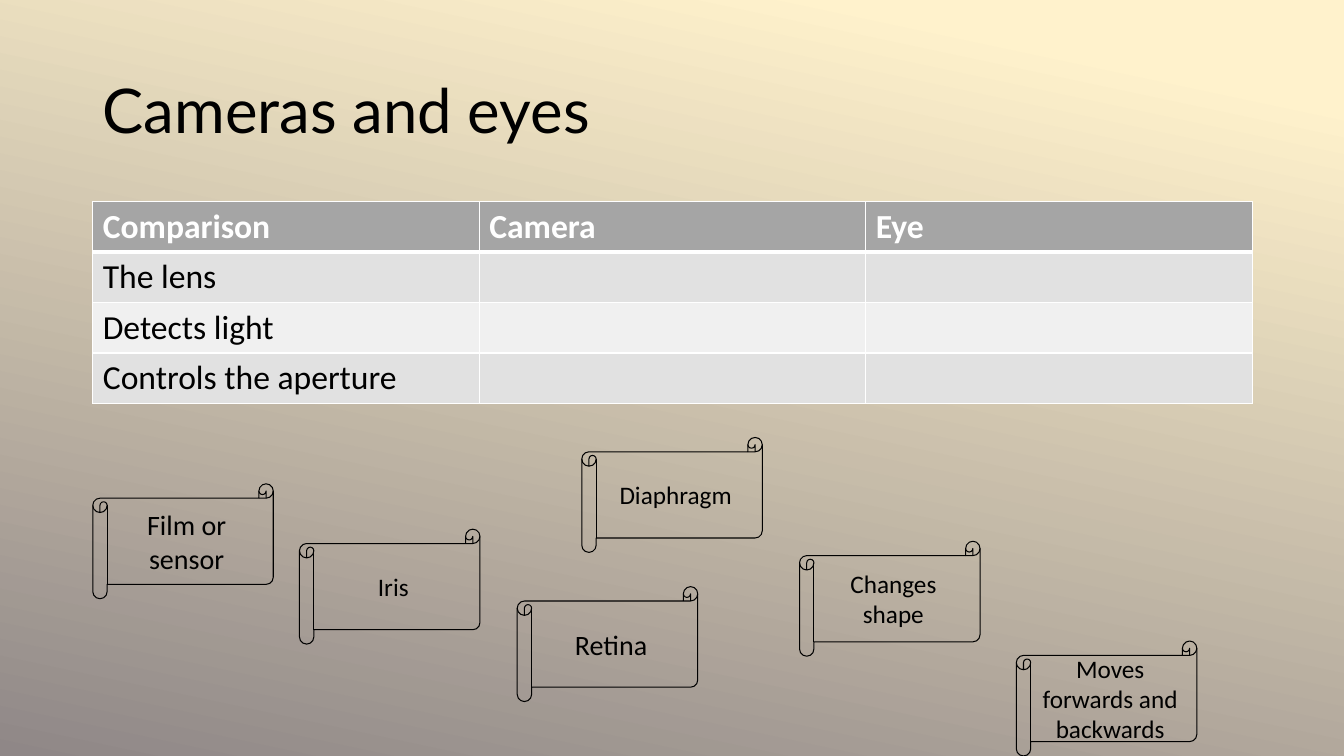
from pptx import Presentation, util as u
from pptx.dml.color import RGBColor
from pptx.enum import shapes, text
from pptx.oxml import parse_xml
from pptx.oxml.ns import nsdecls

TITLE = "Cameras and eyes"
ROWS = [
    ("Comparison", "Camera", "Eye"),
    ("The lens", "", ""),
    ("Detects light", "", ""),
    ("Controls the aperture", "", ""),
]
# label, left, top, type size
SCROLLS = [
    ("Film or sensor", 0.92, 4.8, 20),
    ("Iris", 2.97, 5.25, 18),
    ("Retina", 5.13, 5.82, 20),
    ("Diaphragm", 5.77, 4.34, 18),
    ("Changes shape", 7.93, 5.37, 18),
    ("Moves forwards and backwards", 10.08, 6.36, 18),
]
THEME = {
    "title_font": "Lato", "body_font": "Calibri",
    "title_size": 44, "table_size": 24,
    "ink": "000000", "white": "FFFFFF", "header": "A5A5A5",
    "bands": ("E1E1E1", "F0F0F0"),
    "backdrop": ((0.1, "FFF2CC"), (1, "8F8787")), "angle": 102,
}
LEFT, CONTENT_WIDTH = 0.92, 11.5
TITLE_TOP, TITLE_HEIGHT = 0.4, 1.45
TABLE_TOP, ROW_HEIGHT = 2, 0.5
SCROLL_WIDTH, SCROLL_HEIGHT = 1.79, 1.14


def rgb(name):
    return RGBColor.from_string(THEME.get(name, name))


def write(frame, words, size, font="body_font", color="ink", bold=False, **para_format):
    para = frame.paragraphs[0]
    for key, value in para_format.items():
        setattr(para, key, value)
    span = para.add_run()
    span.text = words
    style = {"name": THEME[font], "size": u.Pt(size), "bold": bold}
    for key, value in style.items():
        setattr(span.font, key, value)
    span.font.color.rgb = rgb(color)


def paint_background(page):
    fill = page.background.fill
    fill.gradient()
    fill.gradient_angle = 360 - THEME["angle"]
    for stop, (position, color) in zip(fill.gradient_stops, THEME["backdrop"]):
        stop.position = position
        stop.color.rgb = rgb(color)


def add_title(page):
    box = page.shapes.add_textbox(*map(u.Inches, (LEFT, TITLE_TOP, CONTENT_WIDTH, TITLE_HEIGHT)))
    box.text_frame.word_wrap = True
    box.text_frame.vertical_anchor = text.MSO_ANCHOR.MIDDLE
    write(box.text_frame, TITLE, THEME["title_size"], "title_font", line_spacing=0.9)


def add_borders(cell, widths):
    """Draw white cell edges; widths maps L, R, T, B to points."""
    properties = cell._tc.get_or_add_tcPr()
    for index, (side, points) in enumerate(widths.items()):
        properties.insert(index, parse_xml(
            f'<a:ln{side} {nsdecls("a")} w="{u.Pt(points)}"><a:solidFill>'
            f'<a:srgbClr val="{THEME["white"]}"/></a:solidFill></a:ln{side}>'))


def add_comparison(page):
    rows, columns = len(ROWS), len(ROWS[0])
    table = page.shapes.add_table(rows, columns, *map(u.Inches, (
        LEFT, TABLE_TOP, CONTENT_WIDTH, rows * ROW_HEIGHT))).table
    for r, labels in enumerate(ROWS):
        header = r == 0
        for c, label in enumerate(labels):
            cell = table.cell(r, c)
            cell.fill.solid()
            cell.fill.fore_color.rgb = rgb("header" if header else THEME["bands"][(r - 1) % 2])
            add_borders(cell, {"L": 1, "R": 1, "T": 3 if r == 1 else 1, "B": 3 if header else 1})
            if label:
                write(cell.text_frame, label, THEME["table_size"],
                      color="white" if header else "ink", bold=header)


def add_scroll(page, label, left, top, size):
    scroll = page.shapes.add_shape(
        shapes.MSO_SHAPE.HORIZONTAL_SCROLL,
        *map(u.Inches, (left, top, SCROLL_WIDTH, SCROLL_HEIGHT)))
    scroll.shadow.inherit = False
    scroll.fill.background()
    scroll.line.color.rgb = rgb("ink")
    scroll.line.width = u.Pt(0.75)
    scroll.text_frame.word_wrap = True
    scroll.text_frame.vertical_anchor = text.MSO_ANCHOR.MIDDLE
    write(scroll.text_frame, label, size, alignment=text.PP_ALIGN.CENTER)


def main():
    deck = Presentation()
    deck.slide_width, deck.slide_height = u.Inches(13.33), u.Inches(7.5)
    page = deck.slides.add_slide(deck.slide_layouts[6])
    paint_background(page)
    add_title(page)
    add_comparison(page)
    for scroll in SCROLLS:
        add_scroll(page, *scroll)
    deck.save("out.pptx")


if __name__ == "__main__":
    main()
